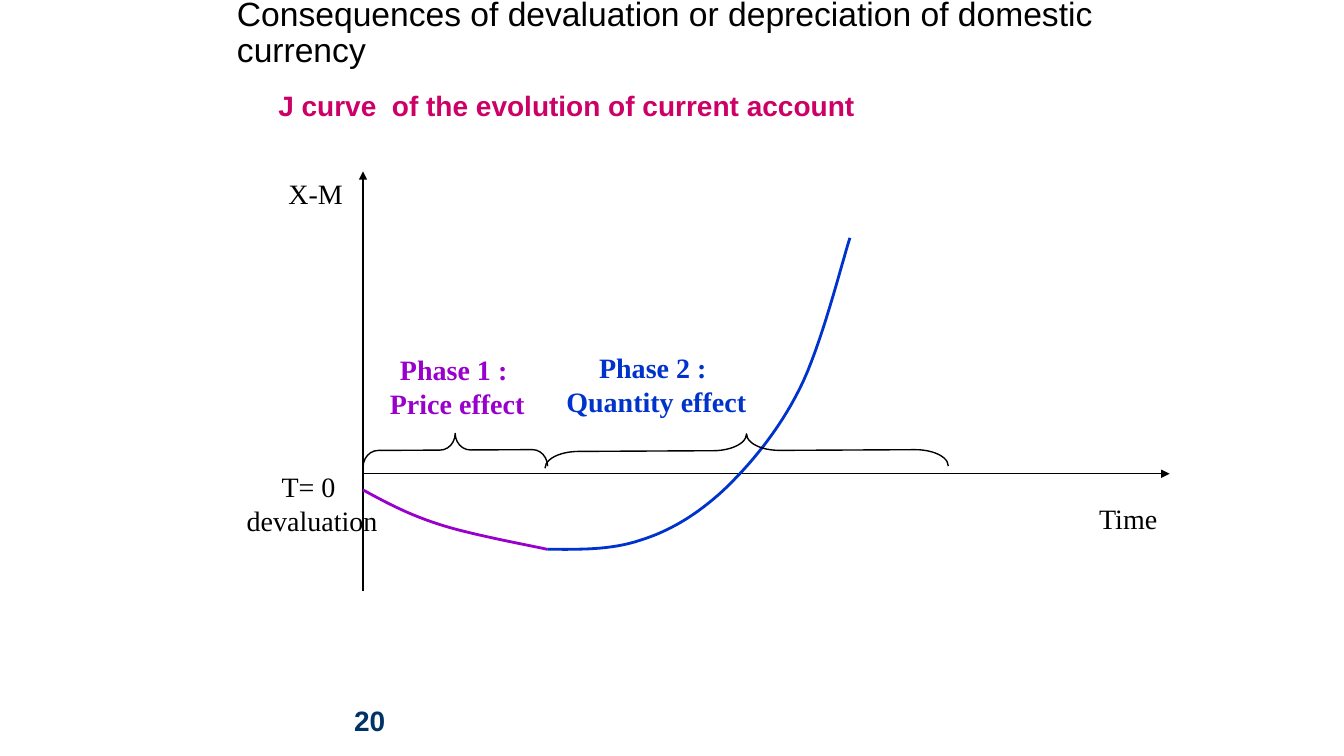
import pptx
import pptx.util
import pptx.dml.color
import pptx.enum.shapes
import pptx.enum.text
import pptx.oxml.ns
from lxml import etree
from pptx.util import Inches, Pt

COLOURS = {
    "black": "000000",
    "navy": "003366",
    "pink": "CC0066",
    "purple": "9900CC",
    "blue": "0033CC",
}
ALIGN = pptx.enum.text.PP_ALIGN
ANCHOR = pptx.enum.text.MSO_ANCHOR
AUTO_SIZE = pptx.enum.text.MSO_AUTO_SIZE
SHAPE = pptx.enum.shapes.MSO_SHAPE

# Axes: the origin lies where the devaluation happens
AXIS_X, AXIS_Y = 3.6, 4.7

# Bezier curves: start point, then two control points and an end point each
PRICE_CURVE = [(3.6, 4.86), (3.82, 4.98), (4.04, 5.1), (4.35, 5.2),
               (4.65, 5.3), (5.25, 5.41), (5.43, 5.45)]
QUANTITY_CURVE = [(5.43, 5.45), (5.74, 5.45), (6.05, 5.46), (6.35, 5.36),
                  (6.64, 5.27), (6.91, 5.11), (7.18, 4.86),
                  (7.44, 4.61), (7.72, 4.28), (7.93, 3.86),
                  (8.14, 3.45), (8.35, 2.61), (8.43, 2.36)]


def rgb(colour):
    return pptx.dml.color.RGBColor.from_string(COLOURS[colour])


def place(shape, left, top, width, height):
    shape.left, shape.top = Inches(left), Inches(top)
    shape.width, shape.height = Inches(width), Inches(height)


def format_paragraph(paragraph, font_name, size, colour, bold, alignment):
    paragraph.alignment = alignment
    font = paragraph.font
    font.name, font.size, font.bold = font_name, Pt(size), bold
    font.color.rgb = rgb(colour)


def style_line(shape, colour, width):
    shape.line.color.rgb = rgb(colour)
    shape.line.width = Pt(width)


def add_title(slide, text):
    title = slide.shapes.title
    place(title, 2.25, 0, 9.42, 0.67)
    frame = title.text_frame
    frame.text = text
    frame.auto_size = AUTO_SIZE.NONE
    frame.vertical_anchor = ANCHOR.MIDDLE
    paragraph = frame.paragraphs[0]
    paragraph.line_spacing = 0.9
    format_paragraph(paragraph, "Arial", 24, "black", False, ALIGN.LEFT)


def add_subtitle(slide, text):
    body = slide.placeholders[1]
    place(body, 2.26, 0.83, 9.14, 0.47)
    frame = body.text_frame
    frame.text = text
    frame.auto_size = AUTO_SIZE.NONE
    paragraph = frame.paragraphs[0]
    paragraph.space_before = Pt(4)
    format_paragraph(paragraph, "Arial", 20, "pink", True, ALIGN.JUSTIFY)
    # First-line indent without a bullet
    properties = paragraph._p.get_or_add_pPr()
    properties.set("marL", "0")
    properties.set("indent", str(Inches(0.4)))
    etree.SubElement(properties, pptx.oxml.ns.qn("a:buNone"))
    properties.append(properties.find(pptx.oxml.ns.qn("a:defRPr")))


def add_page_number(slide, text):
    box = slide.shapes.add_textbox(Inches(0.92), Inches(6.95), Inches(3), Inches(0.4))
    frame = box.text_frame
    frame.word_wrap = True
    frame.vertical_anchor = ANCHOR.MIDDLE
    frame.text = text
    format_paragraph(frame.paragraphs[0], "Arial", 20, "navy", True, ALIGN.RIGHT)


def add_label(slide, text, left, top, width, height, colour="black", bold=False):
    box = slide.shapes.add_textbox(Inches(left), Inches(top), Inches(width), Inches(height))
    frame = box.text_frame
    frame.word_wrap = False
    frame.auto_size = AUTO_SIZE.SHAPE_TO_FIT_TEXT
    frame.text = text
    for paragraph in frame.paragraphs:
        format_paragraph(paragraph, "Times New Roman", 20, colour, bold, ALIGN.CENTER)


def add_axis(slide, start_x, start_y, end_x, end_y):
    axis = slide.shapes.add_connector(
        pptx.enum.shapes.MSO_CONNECTOR.STRAIGHT,
        Inches(start_x), Inches(start_y), Inches(end_x), Inches(end_y))
    style_line(axis, "black", 1)
    etree.SubElement(axis.line._get_or_add_ln(), pptx.oxml.ns.qn("a:tailEnd"), type="triangle")
    etree.SubElement(axis._element.spPr, pptx.oxml.ns.qn("a:effectLst"))


def bezier_points(points, steps=16):
    """Sample a chain of cubic Bezier segments."""
    for first in range(0, len(points) - 1, 3):
        segment = points[first:first + 4]
        for step in range(1, steps + 1):
            t = step / steps
            weights = ((1 - t) ** 3, 3 * t * (1 - t) ** 2, 3 * t ** 2 * (1 - t), t ** 3)
            yield tuple(Inches(sum(weight * point[axis] for weight, point in zip(weights, segment)))
                        for axis in (0, 1))


def add_curve(slide, points, colour):
    start_x, start_y = points[0]
    builder = slide.shapes.build_freeform(Inches(start_x), Inches(start_y))
    builder.add_line_segments(list(bezier_points(points)), close=False)
    curve = builder.convert_to_shape()
    curve.shadow.inherit = False
    curve.fill.background()
    style_line(curve, colour, 2)


def add_brace(slide, left, top, length, curvature):
    brace = slide.shapes.add_shape(
        SHAPE.LEFT_BRACE, Inches(left), Inches(top), Inches(0.33), Inches(length))
    brace.rotation = 89.7
    brace.adjustments[0] = curvature
    brace.adjustments[1] = 0.5
    brace.shadow.inherit = False
    brace.fill.background()
    style_line(brace, "black", 1)


def main():
    presentation = pptx.Presentation()
    presentation.slide_width, presentation.slide_height = Inches(13.33), Inches(7.5)
    slide = presentation.slides.add_slide(presentation.slide_layouts[1])

    # Headings and page number
    add_title(slide, "Consequences of devaluation or depreciation of domestic currency")
    add_subtitle(slide, "J curve  of the evolution of current account")
    add_page_number(slide, "20")

    # Axes and their labels
    add_axis(slide, AXIS_X, 5.86, AXIS_X, 1.7)
    add_axis(slide, AXIS_X, AXIS_Y, 11.6, AXIS_Y)
    add_label(slide, "X-M", 2.76, 1.7, 0.74, 0.43)
    add_label(slide, "T= 0 \ndevaluation", 2.34, 4.61, 1.51, 0.77)
    add_label(slide, "Time", 10.8, 4.93, 0.78, 0.44)

    # J curve
    add_curve(slide, PRICE_CURVE, "purple")
    add_curve(slide, QUANTITY_CURVE, "blue")

    # Phases
    add_brace(slide, 4.35, 3.55, 1.83, 0.458)
    add_brace(slide, 7.24, 2.47, 4, 0.999)
    add_label(slide, "Phase 1 : \nPrice effect", 3.76, 3.45, 1.55, 0.77, "purple", True)
    add_label(slide, "Phase 2 : \nQuantity effect", 5.51, 3.43, 2, 0.77, "blue", True)

    presentation.save("out.pptx")


if __name__ == "__main__":
    main()
